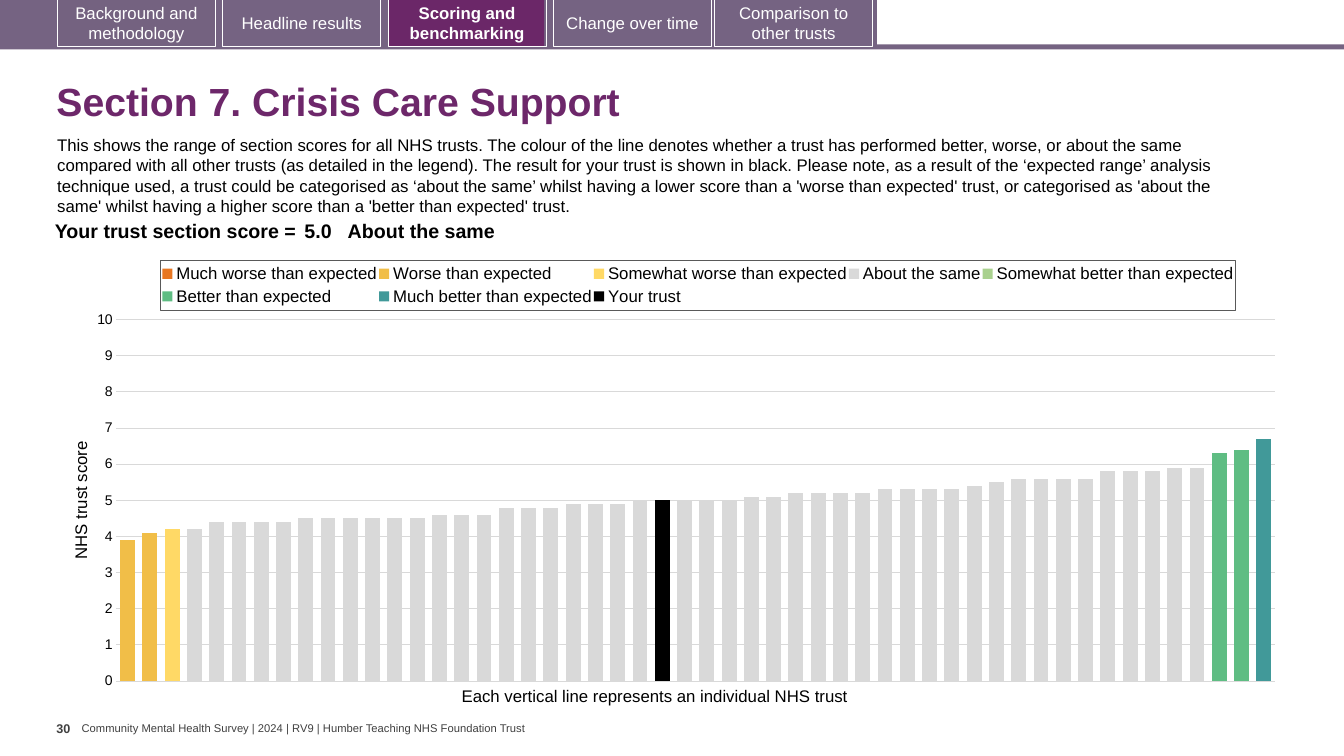
import copy
import pptx
import pptx.chart.data
import pptx.dml.color
import pptx.enum.chart
import pptx.enum.shapes
import pptx.enum.text
import pptx.oxml
import pptx.oxml.ns
import pptx.util

Pt = pptx.util.Pt
RGBColor = pptx.dml.color.RGBColor
ALIGN = pptx.enum.text.PP_ALIGN
ANCHOR = pptx.enum.text.MSO_ANCHOR
qn = pptx.oxml.ns.qn

WHITE = RGBColor(0xFF, 0xFF, 0xFF)
BLACK = RGBColor(0, 0, 0)
FOOTER_GREY = RGBColor(0x40, 0x40, 0x40)
GRID_GREY = RGBColor(0xD9, 0xD9, 0xD9)
LEGEND_GREY = RGBColor(0x59, 0x59, 0x59)
BAND = RGBColor(0x75, 0x63, 0x82)
TAB = RGBColor(0x74, 0x62, 0x80)
ACTIVE = RGBColor(0x6B, 0x27, 0x68)
TITLE = RGBColor(0x6D, 0x27, 0x6A)

# Series: name, colour, first trust, scores
SERIES = [
    ("Much worse than expected", RGBColor(0xE8, 0x77, 0x22), 0, []),
    ("Worse than expected", RGBColor(0xF1, 0xBE, 0x48), 0, [3.9, 4.1]),
    ("Somewhat worse than expected", RGBColor(0xFF, 0xD9, 0x66), 2, [4.2]),
    ("About the same", GRID_GREY, 3, [
        4.2, 4.4, 4.4, 4.4, 4.4, 4.5, 4.5, 4.5, 4.5, 4.5, 4.5, 4.6, 4.6, 4.6, 4.8, 4.8,
        4.8, 4.9, 4.9, 4.9, 5, 5, 5, 5, 5, 5.1, 5.1, 5.2, 5.2, 5.2, 5.2, 5.3, 5.3, 5.3,
        5.3, 5.4, 5.5, 5.6, 5.6, 5.6, 5.6, 5.8, 5.8, 5.8, 5.9, 5.9]),
    ("Somewhat better than expected", RGBColor(0xA9, 0xD1, 0x8E), 0, []),
    ("Better than expected", RGBColor(0x5F, 0xBD, 0x83), 49, [6.3, 6.4]),
    ("Much better than expected", RGBColor(0x41, 0x99, 0x99), 51, [6.7]),
    ("Your trust", BLACK, 24, [5]),
]
TRUSTS = 52

TABS = [  # left, label, fill, bold
    (41, "Background and methodology", TAB, False),
    (159.1, "Headline results", None, False),
    (277.2, "Scoring and benchmarking", None, True),
    (395.3, "Change over time", BAND, False),
    (510.5, "Comparison to other trusts", BAND, False),
]

INTRO = (
    "This shows the range of section scores for all NHS trusts. The colour of the line "
    "denotes whether a trust has performed better, worse, or about the same compared with "
    "all other trusts (as detailed in the legend). The result for your trust is shown in "
    "black. Please note, as a result of the ‘expected range’ analysis technique used, a "
    "trust could be categorised as ‘about the same’ whilst having a lower score than a "
    "'worse than expected' trust, or categorised as 'about the same' whilst having a higher "
    "score than a 'better than expected' trust.")


class SlideBuilder:
    font = "Arial"

    def __init__(self, s):
        self.s = s

    def style(self, font, size, color=BLACK, bold=False):
        font.name, font.size, font.bold = self.font, Pt(size), bold
        font.color.rgb = color

    def add_text(self, tf, text, size, color=BLACK, bold=False, align=ALIGN.LEFT):
        p = tf.paragraphs[0]
        p.alignment = align
        r = p.add_run()
        r.text = text
        self.style(r.font, size, color, bold)
        return p

    def title(self, box, text):
        sp = self.s.shapes.title
        sp.left, sp.top, sp.width, sp.height = map(Pt, box)
        sp.text_frame.vertical_anchor = ANCHOR.MIDDLE
        self.add_text(sp.text_frame, text, 28, TITLE, True).line_spacing = 0.9

    def text(self, box, text, size, color=BLACK, bold=False, insets=None, anchor=ANCHOR.TOP):
        tf = self.s.shapes.add_textbox(*map(Pt, box)).text_frame
        tf.word_wrap = True
        tf.vertical_anchor = anchor
        if insets:
            tf.margin_left = tf.margin_right = Pt(insets[0])
            tf.margin_top = tf.margin_bottom = Pt(insets[1])
        self.add_text(tf, text, size, color, bold)

    def rect(self, box, fill=None, line=None, label=None, bold=False):
        sp = self.s.shapes.add_shape(pptx.enum.shapes.MSO_SHAPE.RECTANGLE, *map(Pt, box))
        sp.shadow.inherit = False
        if fill is None:
            sp.fill.background()
        else:
            sp.fill.solid()
            sp.fill.fore_color.rgb = fill
        if line is None:
            sp.line.fill.background()
        else:
            sp.line.color.rgb = line
            sp.line.width = Pt(0.75)
        if label:
            sp.text_frame.vertical_anchor = ANCHOR.MIDDLE
            self.add_text(sp.text_frame, label, 12, WHITE, bold, ALIGN.CENTER)

    def table(self, box, columns):
        tbl = self.s.shapes.add_table(1, len(columns), *map(Pt, box)).table
        tbl.first_row = tbl.horz_banding = False
        tbl.rows[0].height = Pt(box[3])
        for i, (width, text, inset, align) in enumerate(columns):
            tbl.columns[i].width = Pt(width)
            cell = tbl.cell(0, i)
            cell.fill.background()
            cell.margin_left = cell.margin_right = Pt(inset)
            cell.margin_top = cell.margin_bottom = Pt(2.9)
            self.add_text(cell.text_frame, text, 14, BLACK, True, align)

    def set_layout(self, parent, index, x, y, w, h, inner=False):
        for old in parent.findall(qn("c:layout")):
            parent.remove(old)
        target = '<c:layoutTarget val="inner"/>' if inner else ""
        modes = '<c:xMode val="edge"/><c:yMode val="edge"/>'
        parent.insert(index, pptx.oxml.parse_xml(
            f'<c:layout {pptx.oxml.ns.nsdecls("c")}><c:manualLayout>{target}{modes}'
            f'<c:x val="{x}"/><c:y val="{y}"/><c:w val="{w}"/><c:h val="{h}"/>'
            '</c:manualLayout></c:layout>'))

    def move_last_series_to_right_axis(self, plot_area):
        bars = plot_area.find(qn("c:barChart"))
        cat, val = plot_area.find(qn("c:catAx")), plot_area.find(qn("c:valAx"))
        right, right_cat, right_val = map(copy.deepcopy, (bars, cat, val))
        for ser in right.findall(qn("c:ser"))[:-1]:
            right.remove(ser)
        bars.remove(bars.findall(qn("c:ser"))[-1])
        bars.addnext(right)
        ids = {cat.find(qn("c:axId")).get("val"): "5001",
               val.find(qn("c:axId")).get("val"): "5002"}
        for part in (right, right_cat, right_val):
            for tag in ("c:axId", "c:crossAx"):
                for el in part.findall(qn(tag)):
                    el.set("val", ids[el.get("val")])
        for tag in ("c:majorGridlines", "c:title"):
            right_val.remove(right_val.find(qn(tag)))
        for tag, value in (("c:axPos", "r"), ("c:majorTickMark", "out"),
                           ("c:tickLblPos", "none"), ("c:crosses", "max")):
            right_val.find(qn(tag)).set("val", value)
        val.addnext(right_val)
        right_val.addnext(right_cat)

    def chart(self, box):
        data = pptx.chart.data.CategoryChartData()
        data.categories = [str(n + 1) for n in range(TRUSTS)]
        for name, _, first, scores in SERIES:
            data.add_series(name, [None] * first + scores
                            + [None] * (TRUSTS - first - len(scores)))
        kinds = pptx.enum.chart
        chart = self.s.shapes.add_chart(
            kinds.XL_CHART_TYPE.COLUMN_CLUSTERED, *map(Pt, box), data).chart
        chart.has_title = False
        self.style(chart.font, 10)
        plot = chart.plots[0]
        plot.gap_width, plot.overlap, plot.vary_by_categories = 50, 100, False
        for ser, (_, color, _, _) in zip(plot.series, SERIES):
            ser.format.fill.solid()
            ser.format.fill.fore_color.rgb = color

        # Axes
        chart.category_axis.visible = False
        axis = chart.value_axis
        axis.minimum_scale, axis.maximum_scale, axis.major_unit = 0, 10, 1
        axis.major_tick_mark = axis.minor_tick_mark = kinds.XL_TICK_MARK.NONE
        axis.format.line.fill.background()
        axis.major_gridlines.format.line.color.rgb = GRID_GREY
        axis.major_gridlines.format.line.width = Pt(0.75)
        axis.tick_labels.number_format = "0"
        axis.tick_labels.number_format_is_linked = False
        self.style(axis.tick_labels.font, 10)
        self.add_text(axis.axis_title.text_frame, "NHS trust score", 12, align=ALIGN.CENTER)

        # Legend
        chart.has_legend = True
        legend = chart.legend
        legend.position = kinds.XL_LEGEND_POSITION.TOP
        legend.include_in_layout = False
        self.style(legend.font, 12)
        xml = legend.font and legend._element
        self.set_layout(xml, 1, 0.076, 0.025, 0.878, 0.112)
        xml.find(qn("c:txPr")).addprevious(pptx.oxml.parse_xml(
            f'<c:spPr {pptx.oxml.ns.nsdecls("c", "a")}><a:ln w="9525"><a:solidFill>'
            f'<a:srgbClr val="{LEGEND_GREY}"/></a:solidFill></a:ln></c:spPr>'))

        plot_area = xml.getparent().find(qn("c:plotArea"))
        self.set_layout(plot_area, 0, 0.04, 0.158, 0.946, 0.808, inner=True)
        self.move_last_series_to_right_axis(plot_area)


def main():
    prs = pptx.Presentation()
    prs.slide_width, prs.slide_height = Pt(960), Pt(540)
    b = SlideBuilder(prs.slides.add_slide(prs.slide_layouts[5]))

    # Navigation band and tabs
    b.rect((0, 31.7, 960, 3.6), BAND)
    b.rect((0, 0, 626.4, 33.8), BAND)
    b.rect((277.9, 0, 110.9, 33.1), ACTIVE)
    for left, label, fill, bold in TABS:
        b.rect((left, -0.7, 113, 33.8), fill, WHITE, label, bold)

    # Title and introduction
    b.title((33.1, 48.2, 899.3, 51.8), "Section 7. Crisis Care Support")
    b.text((33.8, 92.9, 873.4, 65.5), INTRO, 12)

    # Chart and its caption
    b.chart((48.2, 177.8, 874.8, 319.7))
    b.text((322.6, 486, 295.9, 21.6), "Each vertical line represents an individual NHS trust", 12)

    # Section score
    b.table((25.2, 154.8, 841.7, 22.3), [
        (189.4, "Your trust section score =", 2.9, ALIGN.RIGHT),
        (33.8, "5.0", 2.9, ALIGN.LEFT),
        (618.5, "About the same", 0, ALIGN.LEFT)])

    # Footer
    b.text((40.3, 511.2, 18, 28.8), "30", 9, FOOTER_GREY, True, (0, 3.6))
    b.text((58.3, 515.5, 322.6, 9.4),
           "Community Mental Health Survey | 2024 | RV9 | Humber Teaching NHS Foundation Trust",
           8, FOOTER_GREY, insets=(0, 0), anchor=ANCHOR.MIDDLE)

    prs.save("out.pptx")


if __name__ == "__main__":
    main()
